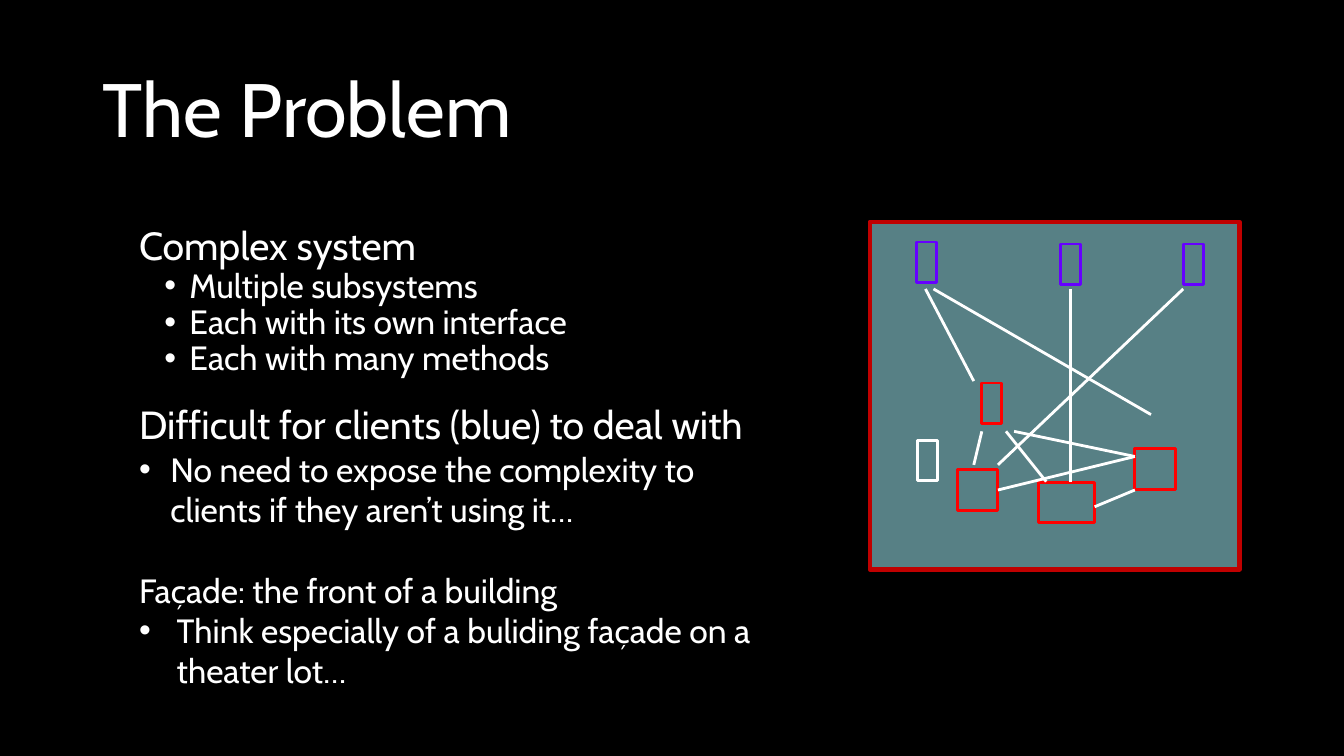
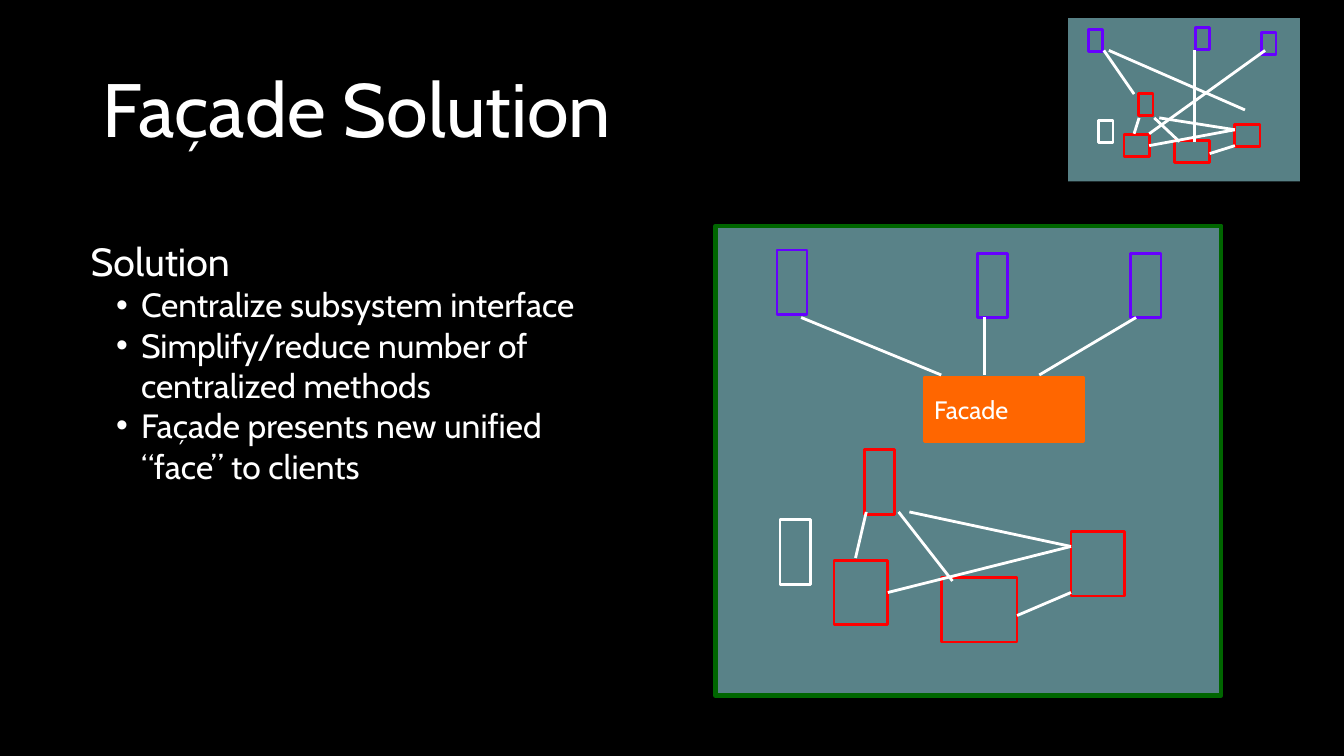
import lxml.etree
import pptx
import pptx.dml.color
import pptx.enum.shapes
import pptx.enum.text
import pptx.oxml.ns
import pptx.util

Cm = pptx.util.Cm
Pt = pptx.util.Pt
qn = pptx.oxml.ns.qn
ANCHOR = pptx.enum.text.MSO_ANCHOR

BLACK, WHITE, RED, PURPLE = "000000", "FFFFFF", "FF0000", "6600FF"
TEAL, DARK_RED, GREEN, ORANGE = "8DCFD8", "C00000", "006600", "FF6600"

# Network grid: 20 columns by 9 rows, counted from the origin of each diagram
# Subsystem boxes: column, middle row, columns wide (None: narrow), colour
SUBSYSTEMS = [(-7, 3.5, None, WHITE), (20, 4.5, 5, RED),
              (-2, 7, 5, RED), (8, 8.5, 7, RED)]
SUBSYSTEM_LINKS = [(1, 0, 0, 4), (5, 0, 20, 3), (20, 7, 15, 9),
                   (4, 0, 9, 6), (20, 3, 3, 7)]
CLIENT_LINKS = [(-5, -17, 22, -2), (12, -17, 12, 6),
                (26, -17, 3, 4), (-6, -17, 0, -6)]


def rgb(color):
    return pptx.dml.color.RGBColor.from_string(color)


def write(p, text, size=24, spacing=1.0, before=0, level=0,
          margin=0.0, hang=0.0, bullet=False):
    """Fill one paragraph with formatted text."""
    p.level = level
    p.alignment = pptx.enum.text.PP_ALIGN.LEFT
    pPr = p._p.get_or_add_pPr()
    pPr.set("marL", str(Cm(margin)))
    pPr.set("indent", str(-Cm(hang)))
    if bullet:
        lxml.etree.SubElement(pPr, qn("a:buFont")).set("typeface", "Arial")
        lxml.etree.SubElement(pPr, qn("a:buChar")).set("char", "•")
    else:
        lxml.etree.SubElement(pPr, qn("a:buNone"))
    p.line_spacing = spacing
    p.space_before = Pt(before)
    p.space_after = Pt(0)
    r = p.add_run()
    r.text = text
    r.font.name = "Cabin"
    r.font.size = Pt(size)
    r.font.color.rgb = rgb(WHITE)


class Deck:
    def __init__(self):
        self.prs = pptx.Presentation()
        self.prs.slide_width, self.prs.slide_height = Cm(33.87), Cm(19.05)
        fill = self.prs.slide_master.background.fill
        fill.solid()
        fill.fore_color.rgb = rgb(BLACK)
        self.s = None

    def place(self, sp, x, y, w, h, anchor):
        sp.left, sp.top, sp.width, sp.height = Cm(x), Cm(y), Cm(w), Cm(h)
        tf = sp.text_frame
        tf.word_wrap = True
        tf.auto_size = pptx.enum.text.MSO_AUTO_SIZE.NONE
        tf.vertical_anchor = anchor
        return tf

    def new_slide(self, title):
        self.s = self.prs.slides.add_slide(self.prs.slide_layouts[1])
        tf = self.place(self.s.shapes.title, 2.34, 1.02, 29.21, 3.68, ANCHOR.MIDDLE)
        write(tf.paragraphs[0], title, size=54, spacing=0.9)

    def body(self, x, y, w, h, items):
        tf = self.place(self.s.placeholders[1], x, y, w, h, ANCHOR.TOP)
        for i, (text, style) in enumerate(items):
            p = tf.add_paragraph() if i else tf.paragraphs[0]
            write(p, text, **style)

    def box(self, x, y, w, h, line=None, fill=None, alpha=None, weight=2):
        sp = self.s.shapes.add_shape(pptx.enum.shapes.MSO_SHAPE.RECTANGLE,
                                     Cm(x), Cm(y), Cm(w), Cm(h))
        sp.shadow.inherit = False
        if fill:
            sp.fill.solid()
            sp.fill.fore_color.rgb = rgb(fill)
        else:
            sp.fill.background()
        if alpha:
            clr = sp.element.spPr.find(".//" + qn("a:srgbClr"))
            lxml.etree.SubElement(clr, qn("a:alpha")).set("val", str(alpha * 1000))
        if line:
            sp.line.color.rgb = rgb(line)
            sp.line.width = Pt(weight)
        else:
            sp.line.fill.background()
        return sp

    def label_box(self, text, x, y, w, h, color):
        tf = self.box(x, y, w, h, line=color, fill=color).text_frame
        tf.word_wrap = True
        tf.vertical_anchor = ANCHOR.MIDDLE
        write(tf.paragraphs[0], text, size=18)

    def link(self, x1, y1, x2, y2):
        c = self.s.shapes.add_connector(pptx.enum.shapes.MSO_CONNECTOR.STRAIGHT,
                                        Cm(x1), Cm(y1), Cm(x2), Cm(y2))
        c.line.color.rgb = rgb(WHITE)
        c.line.width = Pt(2)
        lxml.etree.SubElement(c.element.spPr, qn("a:effectLst"))

    def network(self, origin, span, narrow, clients, entry, links):
        """Draw client and subsystem boxes and the links on the grid."""
        (x0, y0), (w, h) = origin, narrow
        col, row = span[0] / 20, span[1] / 9
        for x, mid, cols, color in SUBSYSTEMS:
            self.box(x0 + x * col, y0 + mid * row - h / 2,
                     cols * col if cols else w, h, line=color)
        self.box(*entry, w, h, line=RED)
        for x, y in clients:
            self.box(x, y, w, h, line=PURPLE)
        for x1, y1, x2, y2 in links:
            self.link(x0 + x1 * col, y0 + y1 * row, x0 + x2 * col, y0 + y2 * row)


def main():
    deck = Deck()
    sub = dict(level=1, margin=1.27, hang=0.63, bullet=True)
    tight = dict(sub, spacing=0.9)

    # Slide 1: the problem
    deck.new_slide("The Problem")
    deck.box(21.92, 5.59, 9.32, 8.76, line=DARK_RED, fill=TEAL, alpha=62, weight=3)
    deck.body(3.25, 5.59, 16.71, 13.46, [
        ("Complex system", dict(size=28, spacing=0.9)),
        ("Multiple subsystems", tight),
        ("Each with its own interface", tight),
        ("Each with many methods", tight),
        ("Difficult for clients (blue) to deal with",
         dict(size=28, spacing=0.9, before=20)),
        ("No need to expose the complexity to clients if they aren’t using it…",
         dict(margin=0.79, hang=0.79, bullet=True)),
        ("Façade: the front of a building", dict(before=29)),
        ("Think especially of a buliding façade on a theater lot…",
         dict(margin=0.95, hang=0.95, bullet=True)),
    ])
    deck.network((24.54, 10.87), (4.06, 1.9), (0.51, 1.02),
                 [(23.09, 6.1), (26.72, 6.15), (29.82, 6.15)], (24.74, 9.65),
                 SUBSYSTEM_LINKS + CLIENT_LINKS)

    # Slide 2: the solution, with the problem repeated in the corner
    deck.new_slide("Façade Solution")
    deck.box(18.03, 5.69, 12.75, 11.84, line=GREEN, fill=TEAL, alpha=63, weight=3)
    deck.box(26.92, 0.46, 5.84, 4.11, fill=TEAL, alpha=62)
    deck.body(2.03, 5.85, 13.77, 10.66, [
        ("Solution", dict(size=28)),
        ("Centralize subsystem interface", sub),
        ("Simplify/reduce number of centralized methods", sub),
        ("Façade presents new unified “face” to clients", sub),
    ])
    deck.network((28.58, 2.97), (2.54, 0.9), (0.36, 0.56),
                 [(27.43, 0.74), (30.12, 0.69), (31.8, 0.81)], (28.7, 2.36),
                 SUBSYSTEM_LINKS + CLIENT_LINKS)
    deck.network((21.56, 12.9), (5.43, 2.61), (0.76, 1.63),
                 [(19.58, 6.3), (24.64, 6.38), (28.5, 6.38)], (21.79, 11.33),
                 SUBSYSTEM_LINKS)

    # Facade between clients and subsystems
    deck.label_box("Facade", 23.29, 9.5, 4.01, 1.63, ORANGE)
    for client_x, facade_x in [(20.19, 23.72), (24.82, 24.82), (28.63, 26.19)]:
        deck.link(client_x, 8, facade_x, 9.45)

    deck.prs.save("out.pptx")


if __name__ == "__main__":
    main()
